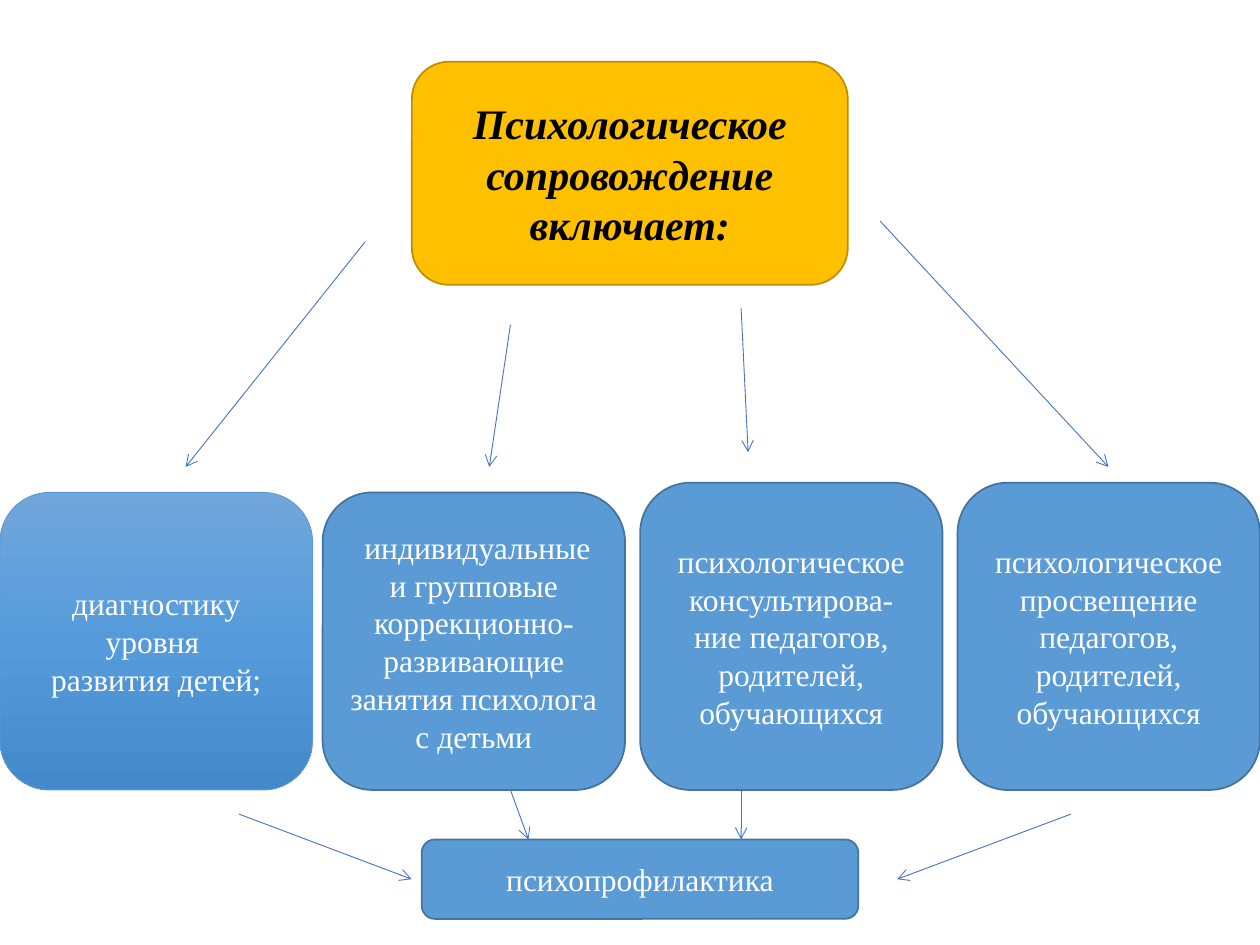
from copy import deepcopy

from lxml import etree
from pptx import Presentation
from pptx.dml.color import RGBColor
from pptx.enum.shapes import MSO_CONNECTOR, MSO_SHAPE
from pptx.enum.text import MSO_ANCHOR, PP_ALIGN
from pptx.oxml.ns import qn
from pptx.util import Pt

ROUNDED = MSO_SHAPE.ROUNDED_RECTANGLE
STRAIGHT = MSO_CONNECTOR.STRAIGHT
MIDDLE = MSO_ANCHOR.MIDDLE
CENTER = PP_ALIGN.CENTER
SERIF = "Times New Roman"
BLUE, DARK_BLUE, WHITE = "5B9BD5", "43739E", "FFFFFF"


def color(value):
    return RGBColor.from_string(value)


def add_box(left, top, width, height, paragraphs, fill=BLUE, line=DARK_BLUE,
            size=18, text_color=WHITE, emphasis=False):
    shape = slide.shapes.add_shape(ROUNDED, Pt(left), Pt(top), Pt(width), Pt(height))
    shape.shadow.inherit = False
    shape.fill.solid()
    shape.fill.fore_color.rgb = color(fill)
    shape.line.color.rgb = color(line)
    shape.line.width = Pt(1)
    frame = shape.text_frame
    frame.word_wrap = True
    frame.vertical_anchor = MIDDLE
    for index, runs in enumerate(paragraphs):
        paragraph = frame.add_paragraph() if index else frame.paragraphs[0]
        paragraph.alignment = CENTER
        for text, font_name in runs:
            run = paragraph.add_run()
            run.text = text
            run.font.name = font_name
            run.font.size = Pt(size)
            run.font.color.rgb = color(text_color)
            run.font.bold = run.font.italic = emphasis
    return shape


presentation = Presentation()
presentation.slide_width = Pt(720)
presentation.slide_height = Pt(540)
slide = presentation.slides.add_slide(presentation.slide_layouts[6])

add_box(235.4, 35.3, 249.1, 127.5, [[("Психологическое сопровождение включает:", SERIF)]],
        fill="FFC000", line="BD8E00", size=24, text_color="000000", emphasis=True)

components = [
    (0, 281.4, 178.6, [[("диагностику уровня ", SERIF)], [("развития детей;", SERIF)]]),
    (184.4, 281.4, 172.8, [[
        (" ", "Calibri"),
        ("индивидуальные и групповые коррекционно-развивающие занятия психолога с детьми", SERIF),
    ]]),
    (365.8, 275.8, 172.8, [
        [("психологическое консультирова-", SERIF)],
        [("ние педагогов, родителей, обучающихся", SERIF)],
    ]),
    (547.2, 275.8, 172.8,
     [[("психологическое просвещение педагогов, родителей, обучающихся", SERIF)]]),
]
components_bottom = 451.4
boxes = [add_box(left, top, width, components_bottom - top, paragraphs)
         for left, top, width, paragraphs in components]

diagnostics = boxes[0]
diagnostics.line.color.rgb = color(BLUE)
diagnostics.line.width = Pt(0.5)
diagnostics.fill.gradient()
diagnostics.fill.gradient_angle = 270
stop_list = diagnostics._element.spPr.find(qn("a:gradFill")).find(qn("a:gsLst"))
stop_list.insert(1, deepcopy(stop_list[0]))
gradient = [(0, "71A6DB"), (0.5, "559BDB"), (1, "448ACA")]
for stop, (position, value) in zip(diagnostics.fill.gradient_stops, gradient):
    stop.position = position
    stop.color.rgb = color(value)

add_box(241, 479.7, 249.5, 45.4, [[("психопрофилактика", SERIF)]])

arrows = [
    (208.6, 138.3, 106.1, 266.8),
    (291.7, 185.5, 279.6, 266.8),
    (423.5, 176.2, 427.5, 258.4),
    (503, 126.4, 633.4, 266.8),
    (136.6, 465.2, 235.2, 502.4),
    (291.7, components_bottom, 302, 479.7),
    (423.5, components_bottom, 423.5, 479.7),
    (612, 465.2, 512.7, 502.4),
]
for points in arrows:
    connector = slide.shapes.add_connector(STRAIGHT, *(Pt(value) for value in points))
    connector.line.color.rgb = color("4472C4")
    connector.line.width = Pt(0.5)
    properties = connector._element.spPr
    etree.SubElement(properties.find(qn("a:ln")), qn("a:tailEnd"), type="arrow")
    etree.SubElement(properties, qn("a:effectLst"))

presentation.save("out.pptx")
